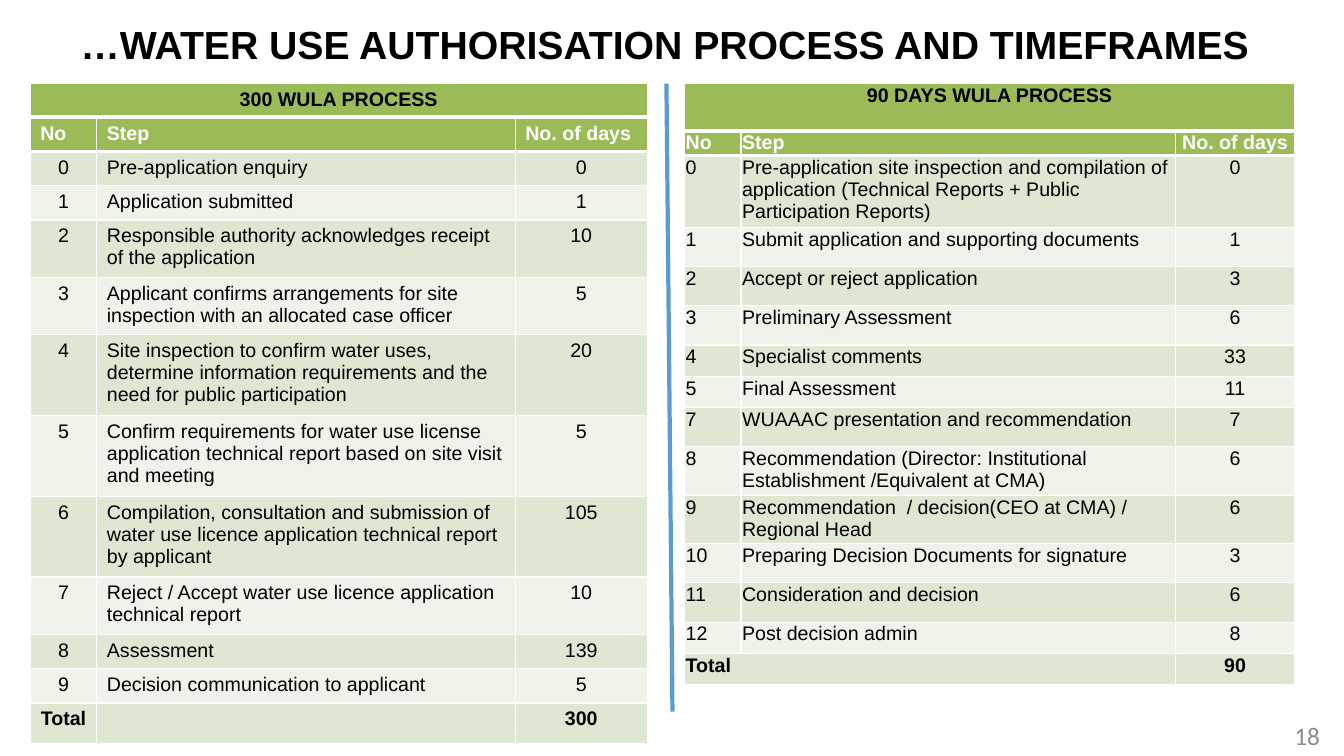
from pptx import Presentation
from pptx.dml.color import RGBColor
from pptx.enum.shapes import MSO_CONNECTOR
from pptx.enum.text import MSO_ANCHOR, MSO_AUTO_SIZE, PP_ALIGN
from pptx.oxml.ns import qn
from pptx.util import Inches, Pt
from lxml.etree import SubElement

# Content
TITLE = "…WATER USE AUTHORISATION PROCESS AND TIMEFRAMES"
PAGE_NUMBER = "18"
HEADINGS = ("No", "Step", "No. of days")
STEPS_300 = [  # number, step, days, row height
    ("0", "Pre-application enquiry", "0", 0.34),
    ("1", "Application submitted", "1", 0.34),
    ("2", "Responsible authority acknowledges receipt of the application", "10", 0.57),
    ("3", "Applicant confirms arrangements for site inspection with an "
          "allocated case officer", "5", 0.57),
    ("4", "Site inspection to confirm water uses, determine information "
          "requirements and the need for public participation", "20", 0.8),
    ("5", "Confirm requirements for water use license application technical "
          "report based on site visit and meeting", "5", 0.8),
    ("6", "Compilation, consultation and submission of water use licence "
          "application technical report by applicant", "105", 0.8),
    ("7", "Reject / Accept water use licence application technical report", "10", 0.57),
    ("8", "Assessment", "139", 0.34),
    ("9", "Decision communication to applicant", "5", 0.34),
    ("Total", "", "300", 0.4),
]
STEPS_90 = [
    ("0", "Pre-application site inspection and compilation of application "
          "(Technical Reports + Public Participation Reports)", "0", 0.71),
    ("1", "Submit application and supporting documents", "1", 0.39),
    ("2", "Accept or reject application", "3", 0.39),
    ("3", "Preliminary Assessment", "6", 0.39),
    ("4", "Specialist comments", "33", 0.31),
    ("5", "Final Assessment", "11", 0.31),
    ("7", "WUAAAC presentation and recommendation", "7", 0.39),
    ("8", "Recommendation (Director: Institutional Establishment "
          "/Equivalent at CMA)", "6", 0.48),
    ("9", "Recommendation  / decision(CEO at CMA) / Regional Head", "6", 0.48),
    ("10", "Preparing Decision Documents for signature", "3", 0.39),
    ("11", "Consideration and decision", "6", 0.39),
    ("12", "Post decision admin", "8", 0.31),
    ("Total", "", "90", 0.31),
]
LEFT, CENTER = PP_ALIGN.LEFT, PP_ALIGN.CENTER
PROCESSES = [
    dict(name="300 WULA PROCESS", steps=STEPS_300, left=0.3,
         columns=(0.66, 4.15, 1.31), head_heights=(0.33, 0.34),
         insets=(0.1, 0.05, 0.1, 0.05), head_aligns=(LEFT, LEFT, LEFT),
         aligns=(CENTER, LEFT, CENTER), merge_total=False),
    dict(name="90 DAYS WULA PROCESS", steps=STEPS_90, left=6.79,
         columns=(0.56, 4.31, 1.18), head_heights=(0.47, 0.24),
         insets=(0.01, 0.01, 0.01, 0), head_aligns=(LEFT, LEFT, CENTER),
         aligns=(LEFT, LEFT, CENTER), merge_total=True),
]
TABLE_TOP = 0.83
GREEN, DARK_BAND, LIGHT_BAND = "9BBB59", "DEE7D1", "EFF3EA"
BLACK, WHITE, BLUE, GREY = "000000", "FFFFFF", "5B9BD5", "8C8C8C"


def rgb(value):
    return RGBColor.from_string(value)


def write(frame, text, size, color, bold=False, align=LEFT, font="Arial"):
    paragraph = frame.paragraphs[0]
    paragraph.text = text
    paragraph.alignment = align
    paragraph.font.name, paragraph.font.size = font, Pt(size)
    paragraph.font.bold, paragraph.font.color.rgb = bold, rgb(color)
    return paragraph


def set_borders(cell, top, bottom):
    properties = cell._tc.get_or_add_tcPr()
    sides = (("a:lnL", 1), ("a:lnR", 1), ("a:lnT", top), ("a:lnB", bottom))
    for position, (side, width) in enumerate(sides):
        line = SubElement(properties, qn(side), w=str(Pt(width)))
        SubElement(SubElement(line, qn("a:solidFill")), qn("a:srgbClr"), val=WHITE)
        properties.insert(position, line)  # borders precede the fill


def add_process(slide, process):
    steps = process["steps"]
    heights = [*process["head_heights"], *(step[3] for step in steps)]
    rows = [(process["name"], "", ""), HEADINGS, *(step[:3] for step in steps)]
    table = slide.shapes.add_table(
        len(rows), 3, Inches(process["left"]), Inches(TABLE_TOP),
        Inches(sum(process["columns"])), Inches(sum(heights))).table
    table.first_row = table.horz_banding = False
    for column, width in zip(table.columns, process["columns"]):
        column.width = Inches(width)

    for r, (texts, height) in enumerate(zip(rows, heights)):
        table.rows[r].height = Inches(height)
        if r == 0:
            aligns = (CENTER,) * 3
        else:
            aligns = process["head_aligns" if r == 1 else "aligns"]
        fill = GREEN if r < 2 else (DARK_BAND, LIGHT_BAND)[r % 2]
        bold = r < 2 or r == len(rows) - 1
        for c, (text, align) in enumerate(zip(texts, aligns)):
            cell = table.cell(r, c)
            (cell.margin_left, cell.margin_top, cell.margin_right,
             cell.margin_bottom) = map(Inches, process["insets"])
            cell.fill.solid()
            cell.fill.fore_color.rgb = rgb(fill)
            write(cell.text_frame, text, 14, WHITE if r == 1 else BLACK, bold, align)
            set_borders(cell, 3 if r in (1, 2) else 1, 3 if r < 2 else 1)

    table.cell(0, 0).merge(table.cell(0, 2))
    if process["merge_total"]:
        table.cell(len(rows) - 1, 0).merge(table.cell(len(rows) - 1, 1))


def main():
    deck = Presentation()
    deck.slide_width, deck.slide_height = Inches(13.33), Inches(7.5)
    slide = deck.slides.add_slide(deck.slide_layouts[5])

    # Title
    title = slide.shapes.title
    title.left, title.top = Inches(0.2), Inches(0.15)
    title.width, title.height = Inches(12.99), Inches(0.57)
    title.text_frame.vertical_anchor = MSO_ANCHOR.TOP
    title.text_frame.auto_size = MSO_AUTO_SIZE.SHAPE_TO_FIT_TEXT
    heading = write(title.text_frame, TITLE, 28, BLACK, bold=True)
    heading.space_before = Pt(6)
    heading._p.get_or_add_pPr().set("marL", str(Inches(0.5)))

    # Process tables
    for process in PROCESSES:
        add_process(slide, process)

    # Divider
    divider = slide.shapes.add_connector(
        MSO_CONNECTOR.STRAIGHT, Inches(6.61), Inches(TABLE_TOP), Inches(6.67), Inches(7.06))
    divider.line.color.rgb = rgb(BLUE)
    divider.line.width = Pt(3)
    SubElement(divider._element.spPr, qn("a:effectLst"))

    # Page number
    page = slide.shapes.add_textbox(Inches(10.19), Inches(7.1), Inches(3), Inches(0.4))
    page.text_frame.word_wrap = True
    page.text_frame.vertical_anchor = MSO_ANCHOR.MIDDLE
    write(page.text_frame, PAGE_NUMBER, 18, GREY, align=PP_ALIGN.RIGHT, font="Calibri")

    deck.save("out.pptx")


if __name__ == "__main__":
    main()
